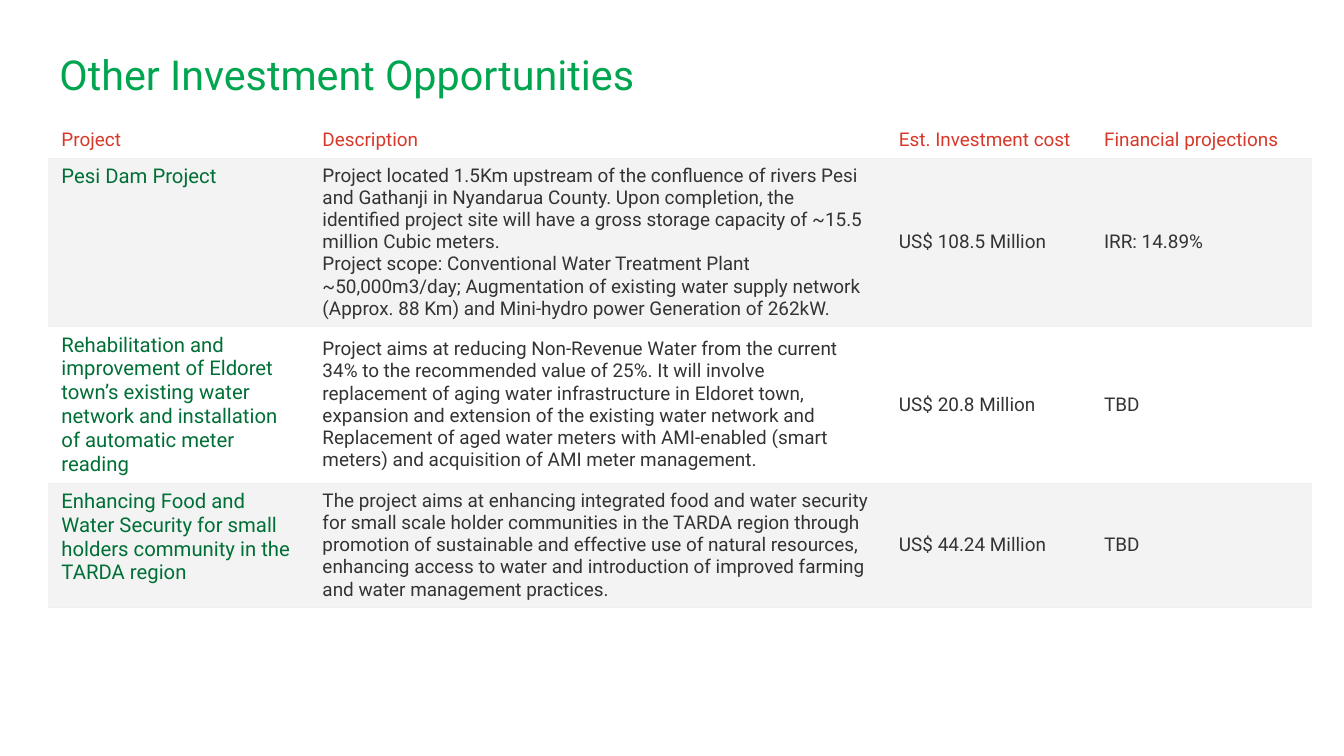
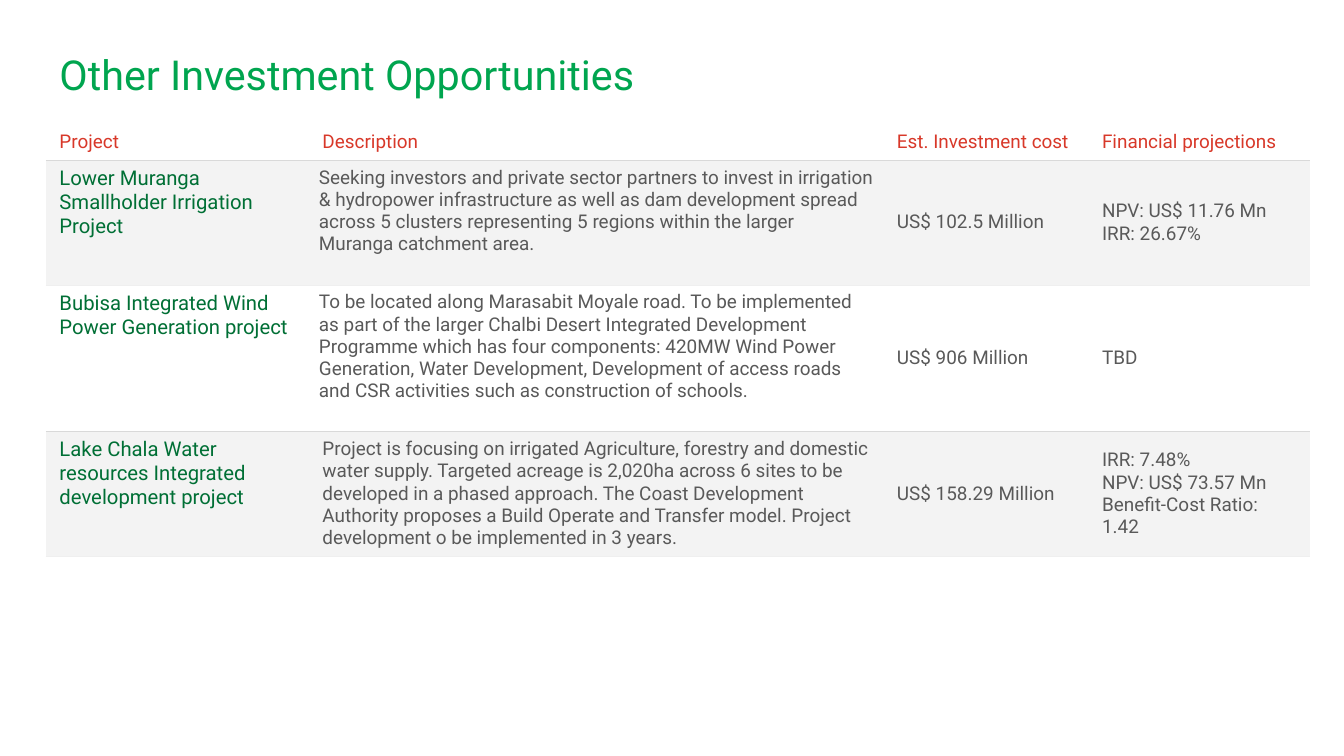
from lxml.etree import SubElement
from pptx import Presentation
from pptx.dml.color import RGBColor
from pptx.enum.text import MSO_ANCHOR as ANCHOR, MSO_AUTO_SIZE as AUTOSIZE, PP_ALIGN as ALIGN
from pptx.oxml.ns import qn
from pptx.util import Emu, Pt

PX_PER_INCH = 100
FONT = "Roboto"
WHITE, BAND = "FFFFFF", "F3F3F3"
TITLE_GREEN, PROJECT_GREEN, HEADER_RED = "00A54F", "006F35", "D83829"
PALE_RULE, GREY_RULE = "EFEFEF", "D9D9D9"
PAD_X, PAD_Y, NARROW_PAD_X = 27, 13, 20

TITLE = "Other Investment Opportunities"
HEADERS = ["Project", "Description", "Est. Investment cost", "Financial projections"]

DAM_AND_WATER = [
    ["Pesi Dam Project",
     "Project located 1.5Km upstream of the confluence of rivers Pesi and Gathanji in "
     "Nyandarua County. Upon completion, the identified project site will have a gross "
     "storage capacity of ~15.5 million Cubic meters.\n"
     "Project scope: Conventional Water Treatment Plant ~50,000m3/day; Augmentation of "
     "existing water supply network (Approx. 88 Km) and Mini-hydro power Generation of 262kW.",
     "US$ 108.5 Million", "IRR: 14.89%"],
    ["Rehabilitation and improvement of Eldoret town’s existing water network and "
     "installation of automatic meter reading",
     "Project aims at reducing Non-Revenue Water from the current 34% to the recommended "
     "value of 25%. It will involve replacement of aging water infrastructure in Eldoret "
     "town, expansion and extension of the existing water network and Replacement of aged "
     "water meters with AMI-enabled (smart meters) and acquisition of AMI meter management.",
     "US$ 20.8 Million", "TBD"],
    ["Enhancing Food and Water Security for small holders community in the TARDA region",
     "The project aims at enhancing integrated food and water security for small scale "
     "holder communities in the TARDA region through promotion of sustainable and effective "
     "use of natural resources, enhancing access to water and introduction of improved "
     "farming and water management practices.",
     "US$ 44.24 Million", "TBD"],
]

IRRIGATION_AND_WIND = [
    ["Lower Muranga Smallholder Irrigation Project",
     "Seeking investors and private sector partners to invest in irrigation & hydropower "
     "infrastructure as well as dam development spread across 5 clusters representing 5 "
     "regions within the larger Muranga catchment area.",
     "US$ 102.5 Million", "NPV: US$ 11.76 Mn\nIRR: 26.67%"],
    ["Bubisa Integrated Wind Power Generation project",
     "To be located along Marasabit Moyale road. To be implemented as part of the larger "
     "Chalbi Desert Integrated Development Programme which has four components: 420MW Wind "
     "Power Generation, Water Development, Development of access roads and CSR activities "
     "such as construction of schools.",
     "US$ 906 Million", "TBD"],
    ["Lake Chala Water resources Integrated development project",
     "Project is focusing on irrigated Agriculture, forestry and domestic water supply. "
     "Targeted acreage is 2,020ha across 6 sites to be developed in a phased approach. The "
     "Coast Development Authority proposes a Build Operate and Transfer model. Project "
     "development o be implemented in 3 years.",
     "US$ 158.29 Million", "IRR: 7.48%\nNPV: US$ 73.57 Mn\nBenefit-Cost Ratio: 1.42"],
]


def px(n):
    return Emu(n * 914400 // PX_PER_INCH)


def rgb(hex_color):
    return RGBColor.from_string(hex_color)


def write(tf, text, size=27, color=HEADER_RED, align=ALIGN.LEFT):
    """Put text into a text frame, one paragraph per line."""
    tf.word_wrap = True
    for i, line in enumerate(text.split("\n")):
        p = tf.paragraphs[0] if i == 0 else tf.add_paragraph()
        p.alignment = align
        r = p.add_run()
        r.text = line
        r.font.name, r.font.size = FONT, Pt(size)
        r.font.color.rgb = rgb(color)


def set_borders(cell, top, bottom):
    """Rule a cell above and below; None hides an edge, as on both sides."""
    tc_pr = cell._tc.get_or_add_tcPr()
    edges = {"lnL": None, "lnR": None, "lnT": top, "lnB": bottom}
    for i, (tag, color) in enumerate(edges.items()):
        ln = SubElement(tc_pr, qn(f"a:{tag}"), w=str(Pt(0.75)))
        if color:
            fill = SubElement(ln, qn("a:solidFill"))
            SubElement(fill, qn("a:srgbClr"), val=color)
        else:
            SubElement(ln, qn("a:noFill"))
        tc_pr.insert(i, ln)


class Deck:
    def __init__(self):
        self.prs = Presentation()
        self.prs.slide_width, self.prs.slide_height = px(2667), px(1500)
        self.s = None

    def add_slide(self, title):
        self.s = self.prs.slides.add_slide(self.prs.slide_layouts[5])
        sp = self.s.shapes.title
        sp.left, sp.top, sp.width, sp.height = px(91), px(63), px(2485), px(167)
        tf = sp.text_frame
        tf.auto_size = AUTOSIZE.NONE
        tf.vertical_anchor = ANCHOR.MIDDLE
        tf.margin_left = tf.margin_right = tf.margin_top = tf.margin_bottom = px(27)
        write(tf, title, size=59, color=TITLE_GREEN)

    def cell(self, cell, text, fill, pad_x=PAD_X, anchor=ANCHOR.TOP, **fmt):
        cell.fill.solid()
        cell.fill.fore_color.rgb = rgb(fill)
        cell.margin_left = cell.margin_right = px(pad_x)
        cell.margin_top = cell.margin_bottom = px(PAD_Y)
        cell.vertical_anchor = anchor
        write(cell.text_frame, text, **fmt)

    def project_table(self, left, top, widths, heights, projects, body_color, rules,
                      narrow_rows=()):
        """rules holds the colour under each row; narrow_rows have top-set descriptions."""
        frame = self.s.shapes.add_table(len(heights), len(widths), px(left), px(top),
                                        px(sum(widths)), px(sum(heights)))
        table = frame.table
        table.first_row = table.horz_banding = False
        for col, width in zip(table.columns, widths):
            col.width = px(width)
        for row, height in zip(table.rows, heights):
            row.height = px(height)
        for i, texts in enumerate([HEADERS] + projects):
            fill = BAND if i % 2 else WHITE
            for j, text in enumerate(texts):
                if i == 0:
                    style = {}
                elif j == 0:
                    style = dict(size=29, color=PROJECT_GREEN)
                elif j == 1 and i in narrow_rows:
                    style = dict(color=body_color, pad_x=NARROW_PAD_X)
                else:
                    style = dict(color=body_color, anchor=ANCHOR.MIDDLE)
                cell = table.cell(i, j)
                self.cell(cell, text, fill, **style)
                set_borders(cell, rules[i - 1] if i else None, rules[i])


def main():
    deck = Deck()
    deck.add_slide(TITLE)
    deck.project_table(95, 242, [518, 1144, 407, 439], [71, 335, 310, 247],
                       DAM_AND_WATER, "333333", [PALE_RULE] * 4)
    deck.add_slide(TITLE)
    deck.project_table(91, 247, [522, 1140, 407, 439], [71, 247, 291, 247],
                       IRRIGATION_AND_WIND, "595959", [GREY_RULE, PALE_RULE] * 2,
                       narrow_rows=(1, 2))
    deck.prs.save("out.pptx")


if __name__ == "__main__":
    main()
